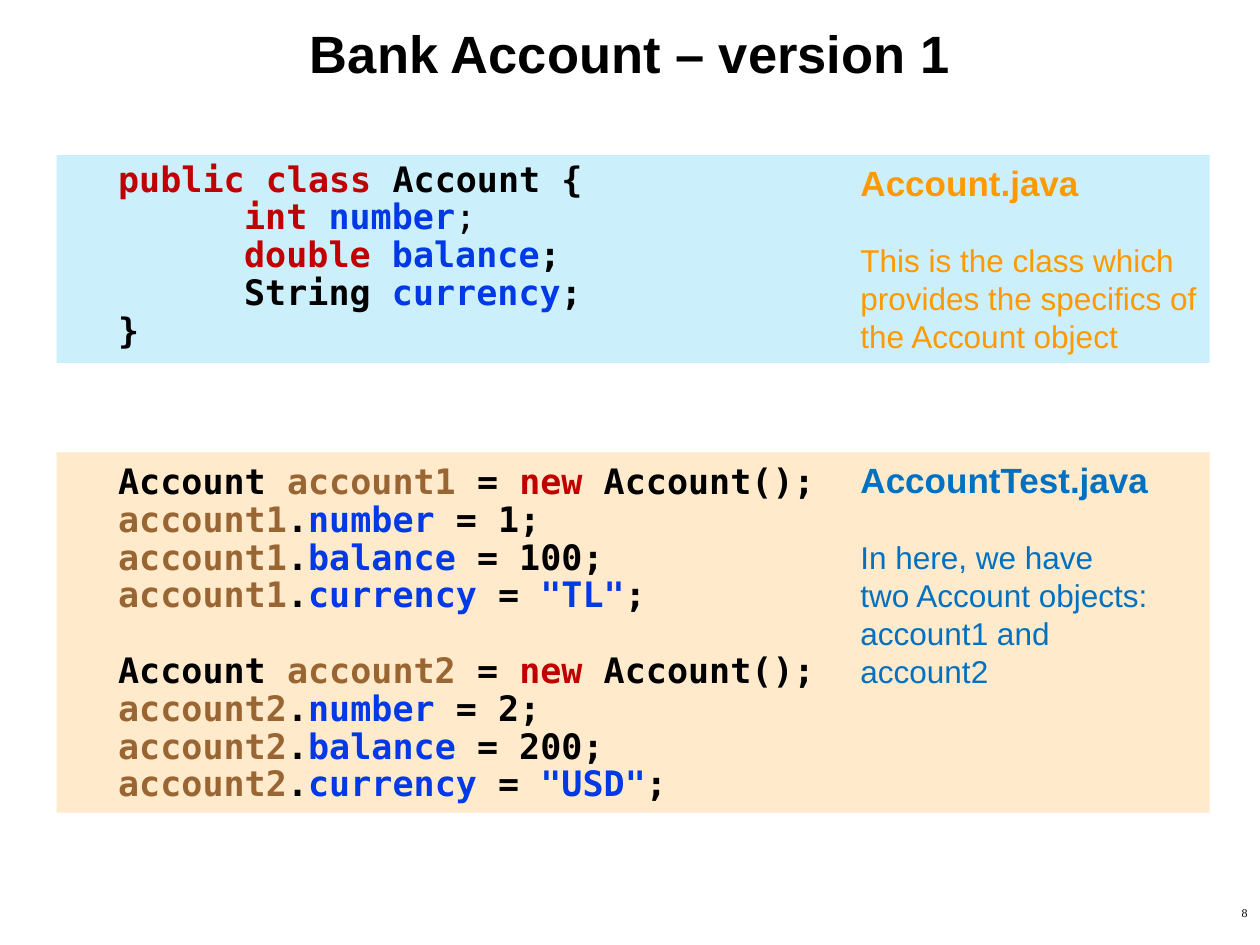
from lxml.etree import SubElement
from pptx import Presentation
from pptx.dml.color import RGBColor
from pptx.enum.shapes import MSO_SHAPE
from pptx.enum.text import MSO_ANCHOR, PP_ALIGN
from pptx.oxml.ns import qn
from pptx.util import Pt

COLORS = {
    "text": "000000", "key": "C00000", "field": "0039E5", "var": "996633",
    "sky": "00B0F0", "orange": "FF9900", "blue": "0070C0",
}
LINE = 21.6
LEFT, WIDTH = 32.4, 658.8


def rgb(name):
    return RGBColor.from_string(COLORS[name])


def style(font, face, size, color, bold=False):
    font.name, font.size, font.bold = face, Pt(size), bold
    font.color.rgb = rgb(color)


def indent(para, left):
    props = para._p.get_or_add_pPr()
    props.set("marL", str(Pt(left)))
    props.set("indent", "0")


def add_para(frame, first):
    return frame.paragraphs[0] if first else frame.add_paragraph()


def add_box(slide, x, y, w, h):
    frame = slide.shapes.add_textbox(Pt(x), Pt(y), Pt(w), Pt(h)).text_frame
    frame.word_wrap = True
    return frame


def add_label(slide, box, text, face, size, align, bold=False):
    frame = add_box(slide, *box)
    para = frame.paragraphs[0]
    para.text, para.alignment = text, align
    style(para.font, face, size, "text", bold)
    return frame


def add_panel(slide, box, fill, ink, head, note):
    """Draw a tinted panel with a file name and a note at its right."""
    x, y, w, h = box
    shape = slide.shapes.add_shape(MSO_SHAPE.RECTANGLE, Pt(x), Pt(y), Pt(w), Pt(h))
    shape.shadow.inherit = False
    shape.line.fill.background()
    shape.fill.solid()
    shape.fill.fore_color.rgb = rgb(fill)
    tint = shape._element.spPr.find(qn("a:solidFill"))[0]
    SubElement(tint, qn("a:alpha")).set("val", "20000")
    frame = shape.text_frame
    frame.word_wrap, frame.vertical_anchor = True, MSO_ANCHOR.TOP
    for i, (text, size) in enumerate([(head, 20), (note, 18)]):
        para = add_para(frame, i == 0)
        para.text, para.alignment = text, PP_ALIGN.LEFT
        para.line_spacing = Pt(size * 1.2)
        para.space_before = Pt(i * LINE)
        indent(para, 452.2)
        style(para.font, "Arial", size, ink, i == 0)


def add_code(slide, box, lines):
    """Write lines of (level, gap, tokens), each token a (kind, text) pair."""
    frame = add_box(slide, *box)
    for i, (level, gap, tokens) in enumerate(lines):
        para = add_para(frame, i == 0)
        para.line_spacing, para.space_before = Pt(LINE), Pt(gap)
        indent(para, 28 + 72 * level)
        for kind, text in tokens:
            run = para.add_run()
            run.text = text
            plain = kind == "plain"
            style(run.font, "DejaVu Sans Mono", 20, "text" if plain else kind, not plain)


def set_up(name, gap, values):
    """Return the lines that create an object and set its fields."""
    make = [("text", "Account "), ("var", name), ("text", " = "),
            ("key", "new"), ("text", " Account();")]
    lines = [(0, gap, make)]
    for field, kind, value in values:
        lines.append((0, 0, [("var", name), ("text", "."), ("field", field),
                             ("text", " = "), (kind, value), ("text", ";")]))
    return lines


def account(number, balance, currency):
    return [("number", "text", number), ("balance", "text", balance),
            ("currency", "field", currency)]


def main():
    deck = Presentation()
    deck.slide_width, deck.slide_height = Pt(720), Pt(540)
    slide = deck.slides.add_slide(deck.slide_layouts[6])

    top = (LEFT, 88.6, WIDTH, 118.8)
    low = (LEFT, 258.5, WIDTH, 205.9)
    add_panel(slide, top, "sky", "orange", "Account.java",
              "This is the class which provides the specifics of the Account object")
    add_panel(slide, low, "orange", "blue", "AccountTest.java",
              "In here, we have\vtwo Account objects:\vaccount1 and\vaccount2")

    add_code(slide, top, [
        (0, 0, [("key", "public class "), ("text", "Account {")]),
        (1, 0, [("key", "int"), ("field", " number"), ("plain", ";")]),
        (1, 0, [("key", "double"), ("field", " balance"), ("text", ";")]),
        (1, 0, [("text", "String"), ("field", " currency"), ("text", ";")]),
        (0, 0, [("text", "}")]),
    ])
    add_code(slide, (LEFT, 261.4, WIDTH, 203),
             set_up("account1", 0, account("1", "100", '"TL"'))
             + set_up("account2", LINE, account("2", "200", '"USD"')))

    title = add_label(slide, (0, 0, 720, 60.5), "Bank Account – version 1",
                      "Arial", 30, PP_ALIGN.CENTER, True)
    title.vertical_anchor = MSO_ANCHOR.MIDDLE
    add_label(slide, (570, 514, 150, 26), "8", "Times New Roman", 6.8, PP_ALIGN.RIGHT)
    deck.save("out.pptx")


if __name__ == "__main__":
    main()
